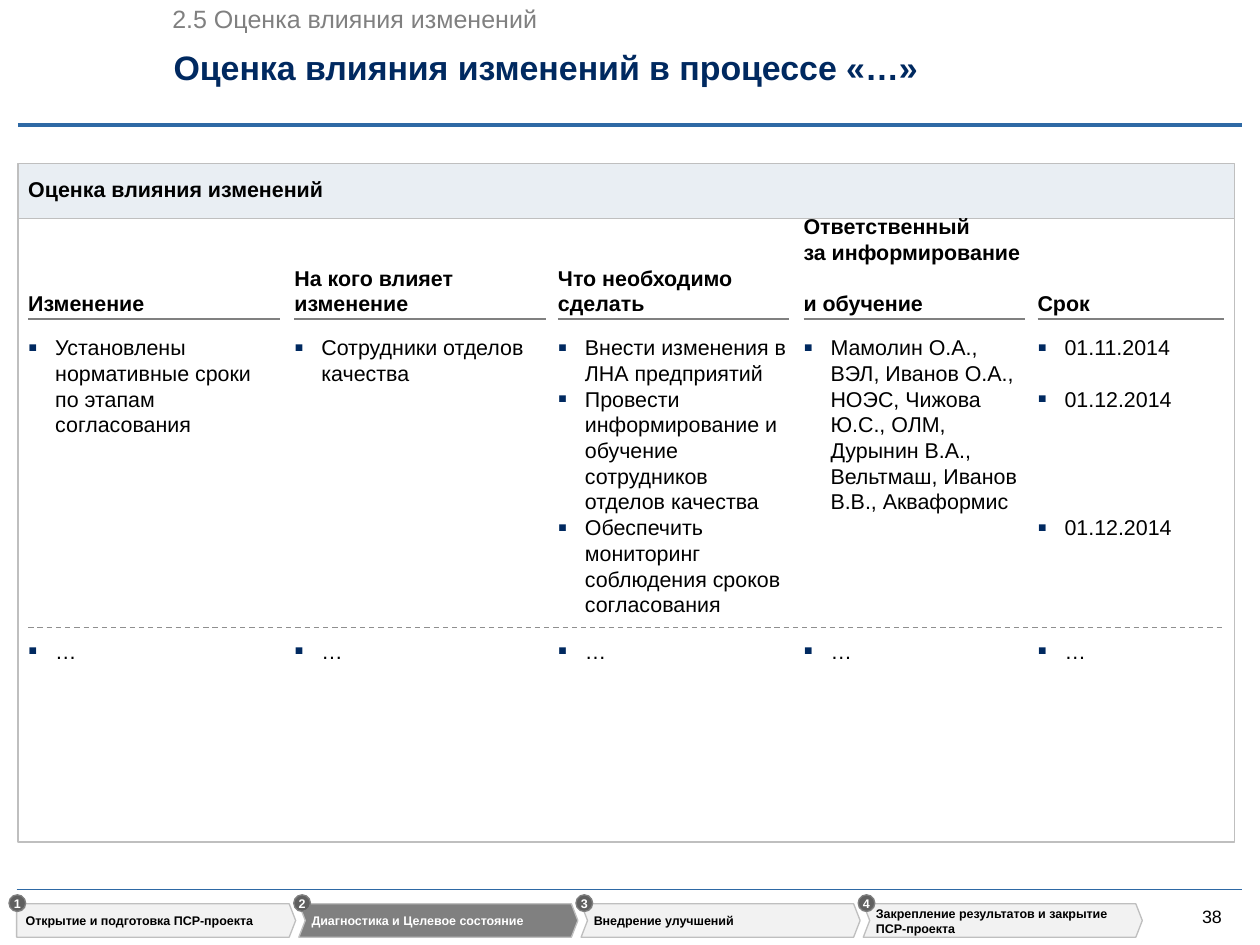
import pptx
import pptx.util
import pptx.dml.color
import pptx.enum.dml
import pptx.enum.shapes
import pptx.enum.text
from lxml import etree

Inches = pptx.util.Inches
Pt = pptx.util.Pt
Anchor = pptx.enum.text.MSO_ANCHOR
Align = pptx.enum.text.PP_ALIGN
Preset = pptx.enum.shapes.MSO_SHAPE
qn = pptx.oxml.ns.qn

# Content
SECTION = "2.5 Оценка влияния изменений"
TITLE = "Оценка влияния изменений в процессе «…»"
BAND_TITLE = "Оценка влияния изменений"
PAGE_NUMBER = "38"
NEXT_ROW = "…"
# left, width, heading, items as (text, empty lines above)
COLUMNS = [
    (0.22, 1.96, "Изменение",
     [("Установлены нормативные сроки по этапам согласования", 0)]),
    (2.29, 1.96, "На кого влияет изменение",
     [("Сотрудники отделов качества", 0)]),
    (4.34, 1.80, "Что необходимо сделать",
     [("Внести изменения в ЛНА предприятий", 0),
      ("Провести информирование и обучение сотрудников отделов качества", 0),
      ("Обеспечить мониторинг соблюдения сроков согласования", 0)]),
    (6.25, 1.72, "Ответственный \vза информирование \vи обучение",
     [("Мамолин О.А., ВЭЛ, Иванов О.А., НОЭС, Чижова Ю.С., ОЛМ, "
       "Дурынин В.А., Вельтмаш, Иванов В.В., Акваформис", 0)]),
    (8.07, 1.45, "Срок",
     [("01.11.2014", 0), ("01.12.2014", 1), ("01.12.2014", 4)]),
]
STAGES = [
    "Открытие и подготовка ПСР-проекта",
    "Диагностика и Целевое состояние",
    "Внедрение улучшений",
    "Закрепление результатов и закрытие ПСР-проекта",
]
CURRENT_STAGE = 1

# Layout and colours
HEADING_TOP, HEADING_BOTTOM = 1.85, 2.48
BODY_TOP, DIVIDER, NEXT_TOP = 2.6, 4.88, 4.96
BODY_LINE = 14.4
STAGE_LEFT, STAGE_STEP, STAGE_WIDTH = 0.13, 2.195, 2.17
STAGE_TOP, STAGE_HEIGHT, STAGE_TIP = 7.03, 0.26, 0.05
NAVY, BLUE, BLACK, WHITE = "002960", "2E69A5", "000000", "FFFFFF"
GREY, BORDER = "808080", "BFBFBF"

presentation = pptx.Presentation()
presentation.slide_width = Inches(9.8)
presentation.slide_height = Inches(7.35)
slide = presentation.slides.add_slide(presentation.slide_layouts[6])


def color(value):
    return pptx.dml.color.RGBColor.from_string(value)


def style_shape(shape, fill, line):
    shape.shadow.inherit = False
    if fill:
        shape.fill.solid()
        shape.fill.fore_color.rgb = color(fill)
    else:
        shape.fill.background()
    shape.line.color.rgb = color(line)
    shape.line.width = Pt(0.75)


def add_preset(preset, left, top, width, height, fill, line):
    shape = slide.shapes.add_shape(
        preset, Inches(left), Inches(top), Inches(width), Inches(height))
    style_shape(shape, fill, line)
    return shape


def add_line(left, right, y, line_color, width=0.75, dashed=False):
    connector = slide.shapes.add_connector(
        pptx.enum.shapes.MSO_CONNECTOR.STRAIGHT,
        Inches(left), Inches(y), Inches(right), Inches(y))
    connector.line.color.rgb = color(line_color)
    connector.line.width = Pt(width)
    if dashed:
        connector.line.dash_style = pptx.enum.dml.MSO_LINE.DASH
    properties = connector.line._get_or_add_ln().getparent()
    etree.SubElement(properties, qn("a:effectLst"))


def set_frame(shape, anchor, left=0, right=0, bottom=0, wrap=True):
    frame = shape.text_frame
    frame.margin_left, frame.margin_right = Inches(left), Inches(right)
    frame.margin_top, frame.margin_bottom = 0, Inches(bottom)
    frame.vertical_anchor = anchor
    frame.word_wrap = wrap
    return frame


def write(paragraph, text, size, text_color=BLACK, bold=False, align=Align.LEFT):
    paragraph.alignment = align
    for index, part in enumerate(text.split("\v")):
        if index:
            # A line break takes the size of the text around it
            paragraph.add_line_break()
            etree.SubElement(paragraph._p[-1], qn("a:rPr"), sz=str(size * 100))
        run = paragraph.add_run()
        run.text = part
        run.font.name = "Arial"
        run.font.size = Pt(size)
        run.font.bold = bold
        run.font.color.rgb = color(text_color)


def add_text(left, top, width, height, text, size, text_color=BLACK,
             bold=False, anchor=Anchor.MIDDLE, bottom=0, wrap=True):
    box = slide.shapes.add_textbox(
        Inches(left), Inches(top), Inches(width), Inches(height))
    frame = set_frame(box, anchor, bottom=bottom, wrap=wrap)
    write(frame.paragraphs[0], text, size, text_color, bold)


def add_bullets(left, top, width, height, items):
    box = slide.shapes.add_textbox(
        Inches(left), Inches(top), Inches(width), Inches(height))
    frame = set_frame(box, Anchor.TOP)
    for index, (text, lines_above) in enumerate(items):
        paragraph = frame.add_paragraph() if index else frame.paragraphs[0]
        if lines_above:
            paragraph.space_before = Pt(lines_above * BODY_LINE)
        properties = paragraph._p.get_or_add_pPr()
        properties.set("marL", str(Inches(0.21)))
        properties.set("indent", str(-Inches(0.21)))
        bullet_color = etree.SubElement(properties, qn("a:buClr"))
        etree.SubElement(bullet_color, qn("a:srgbClr"), val=NAVY)
        etree.SubElement(properties, qn("a:buSzPct"), val="125000")
        etree.SubElement(properties, qn("a:buFont"), typeface="Arial")
        etree.SubElement(properties, qn("a:buChar"), char="▪")
        write(paragraph, text, 12)


# Title, rules and page number
add_line(0.13, 9.66, 6.92, BLUE)
add_line(0.14, 9.66, 0.97, BLUE, 2.25)
add_text(9.35, 7.04, 0.23, 0.17, PAGE_NUMBER, 10, wrap=False)
add_text(1.35, 0.36, 7.31, 0.32, TITLE, 19, NAVY, bold=True)
add_text(1.34, 0.03, 2.86, 0.24, SECTION, 14, GREY, anchor=Anchor.TOP, wrap=False)

# Frame with its heading band
add_preset(Preset.RECTANGLE, 0.14, 1.32, 9.46, 5.23, None, BORDER)
add_preset(Preset.RECTANGLE, 0.14, 1.27, 9.46, 0.43, "E9EEF3", BORDER)
add_text(0.22, 1.37, 4.66, 0.22, BAND_TITLE, 12, bold=True,
         anchor=Anchor.BOTTOM, bottom=0.02)

# Columns
for left, width, heading, items in COLUMNS:
    add_line(left, left + width, HEADING_BOTTOM, GREY)
    add_text(left, HEADING_TOP, width, HEADING_BOTTOM - HEADING_TOP, heading, 12,
             bold=True, anchor=Anchor.BOTTOM, bottom=0.02)
    add_bullets(left, BODY_TOP, width, 2.22, items)
    add_bullets(left, NEXT_TOP, width, 0.2, [(NEXT_ROW, 0)])
add_line(0.22, 9.52, DIVIDER, "8F8F8F", dashed=True)

# Project stages
for index, stage in enumerate(STAGES):
    left = STAGE_LEFT + index * STAGE_STEP
    right = left + STAGE_WIDTH
    middle, bottom = STAGE_TOP + STAGE_HEIGHT / 2, STAGE_TOP + STAGE_HEIGHT
    notch = STAGE_TIP if index else 0
    outline = [(left, STAGE_TOP), (right - STAGE_TIP, STAGE_TOP), (right, middle),
               (right - STAGE_TIP, bottom), (left, bottom), (left + notch, middle)]
    points = [(Inches(x), Inches(y)) for x, y in outline]
    builder = slide.shapes.build_freeform(*points[0], scale=1.0)
    builder.add_line_segments(points[1:], close=True)
    chevron = builder.convert_to_shape()
    current = index == CURRENT_STAGE
    style_shape(chevron, GREY if current else "F2F2F2", BORDER)
    frame = set_frame(chevron, Anchor.MIDDLE, left=0.1 if index else 0.07,
                      right=STAGE_TIP)
    write(frame.paragraphs[0], stage, 7, WHITE if current else BLACK, bold=True)

    badge = add_preset(Preset.OVAL, left - (0.04 if index else 0.06), 6.96,
                       0.13, 0.13, "606060", GREY)
    frame = set_frame(badge, Anchor.MIDDLE, wrap=False)
    write(frame.paragraphs[0], str(index + 1), 7, WHITE, True, Align.CENTER)

presentation.save("out.pptx")
